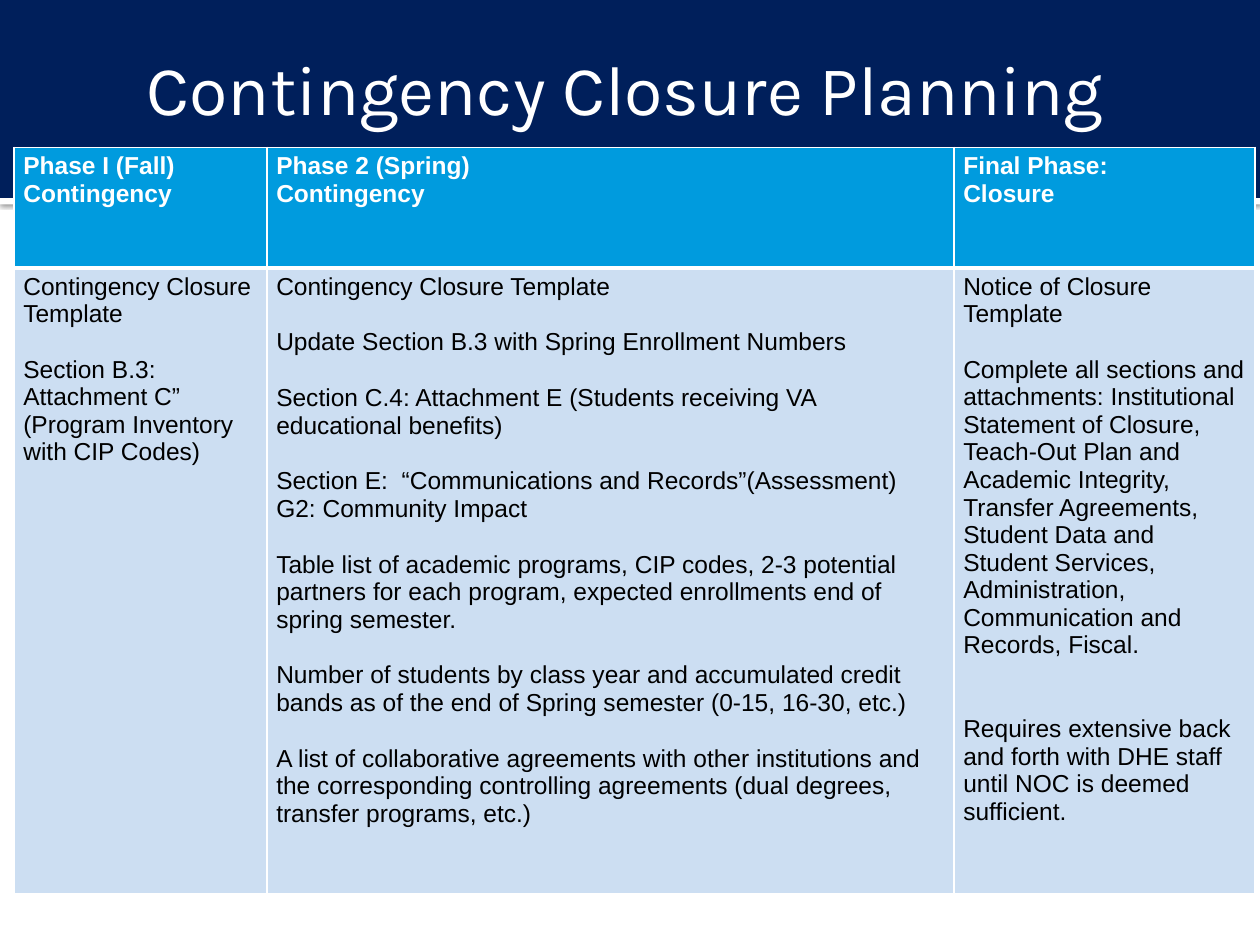
from lxml import etree
from pptx import Presentation
from pptx.dml.color import RGBColor
from pptx.enum import shapes, text
from pptx.oxml import ns
from pptx.util import Cm, Pt

COLORS = {
    "navy": "001F5B",
    "white": "FFFFFF",
    "header": "009BDE",
    "body": "CCDEF2",
    "ink": "000000",
}
LINE = 16.1  # height in points of one 14 pt line

PHASES = [
    {
        "width": 5.1,
        "heading": ["Phase I (Fall)", "Contingency"],
        # (lines of space above, wording)
        "tasks": [
            (0, "Contingency Closure Template"),
            (1, "Section B.3: Attachment C” (Program Inventory with CIP Codes)"),
        ],
    },
    {
        "width": 13.85,
        "heading": ["Phase 2 (Spring)", "Contingency"],
        "tasks": [
            (0, "Contingency Closure Template"),
            (1, "Update Section B.3 with Spring Enrollment Numbers"),
            (1, "Section C.4: Attachment E (Students receiving VA educational benefits)"),
            (1, "Section E:  “Communications and Records”(Assessment)"),
            (0, "G2: Community Impact"),
            (1, "Table list of academic programs, CIP codes, 2-3 potential partners "
                "for each program, expected enrollments end of spring semester."),
            (1, "Number of students by class year and accumulated credit bands as of "
                "the end of Spring semester (0-15, 16-30, etc.)"),
            (1, "A list of collaborative agreements with other institutions and the "
                "corresponding controlling agreements (dual degrees, transfer programs, etc.)"),
        ],
    },
    {
        "width": 6.07,
        "heading": ["Final Phase:", "Closure"],
        "tasks": [
            (0, "Notice of Closure Template"),
            (1, "Complete all sections and attachments: Institutional Statement of "
                "Closure, Teach-Out Plan and Academic Integrity, Transfer Agreements, "
                "Student Data and Student Services, Administration, Communication and "
                "Records, Fiscal."),
            (2, "Requires extensive back and forth with DHE staff until NOC is deemed "
                "sufficient."),
        ],
    },
]


def rgb(name):
    return RGBColor.from_string(COLORS[name])


def add_run(paragraph, wording, font_name, size, color, bold=False):
    run = paragraph.add_run()
    run.text = wording
    run.font.name = font_name
    run.font.size = Pt(size)
    run.font.bold = bold
    run.font.color.rgb = rgb(color)


def add_bar(slide, left, top, width, height, color):
    bar = slide.shapes.add_shape(shapes.MSO_SHAPE.RECTANGLE,
                                 Cm(left), Cm(top), Cm(width), Cm(height))
    bar.shadow.inherit = False
    bar.fill.solid()
    bar.fill.fore_color.rgb = rgb(color)
    bar.line.fill.background()
    return bar


def add_drop_shadow(bar):
    effects = bar.element.spPr.find(ns.qn("a:effectLst"))
    shadow = etree.SubElement(effects, ns.qn("a:outerShdw"), blurRad=str(Pt(2.5)),
                              dist=str(Pt(0.8)), dir="5400000", rotWithShape="0")
    color = etree.SubElement(shadow, ns.qn("a:srgbClr"), val=COLORS["ink"])
    etree.SubElement(color, ns.qn("a:alpha"), val="60000")


def build_banner(slide, left, top, width, height):
    # Navy band with a thin white, shadowed strip below it
    strip = add_bar(slide, left, top + height, width, 0.13, "white")
    add_drop_shadow(strip)
    add_bar(slide, left, top, width, height, "navy")

    # Title, brought in front of the band
    title = slide.shapes.title
    title.element.getparent().append(title.element)
    title.left, title.top = Cm(left + 0.2), Cm(top)
    title.width, title.height = Cm(width - 0.38), Cm(2.74)
    frame = title.text_frame
    frame.auto_size = text.MSO_AUTO_SIZE.NONE
    frame.word_wrap = True
    frame.vertical_anchor = text.MSO_ANCHOR.BOTTOM
    frame.margin_left = Cm(0.25)
    frame.margin_right = frame.margin_top = frame.margin_bottom = Cm(0.13)
    paragraph = frame.paragraphs[0]
    paragraph.alignment = text.PP_ALIGN.CENTER
    add_run(paragraph, "Contingency Closure Planning ", "Karla", 40, "white")


def set_borders(cell, widths):
    properties = cell._tc.get_or_add_tcPr()
    for position, (side, width) in enumerate(zip("LRTB", widths)):
        line = etree.Element(ns.qn(f"a:ln{side}"), w=str(Pt(width)))
        fill = etree.SubElement(line, ns.qn("a:solidFill"))
        etree.SubElement(fill, ns.qn("a:srgbClr"), val=COLORS["white"])
        properties.insert(position, line)


def fill_cell(cell, entries, background, color, bold, borders):
    cell.fill.solid()
    cell.fill.fore_color.rgb = rgb(background)
    cell.margin_left = cell.margin_right = Cm(0.19)
    cell.margin_top = cell.margin_bottom = Cm(0.1)
    frame = cell.text_frame
    for index, (gap, wording) in enumerate(entries):
        paragraph = frame.add_paragraph() if index else frame.paragraphs[0]
        paragraph.space_before = Pt(gap * LINE)
        add_run(paragraph, wording, "Arial", 14, color, bold)
    set_borders(cell, borders)


def build_phase_table(slide, left, top, width, header_height, body_height):
    frame = slide.shapes.add_table(2, len(PHASES), Cm(left), Cm(top), Cm(width),
                                   Cm(header_height + body_height))
    table = frame.table
    table.rows[0].height = Cm(header_height)
    table.rows[1].height = Cm(body_height)
    for column, phase in enumerate(PHASES):
        table.columns[column].width = Cm(phase["width"])
        heading = [(0, line) for line in phase["heading"]]
        # Border widths: left, right, top, bottom
        fill_cell(table.cell(0, column), heading, "header", "white", True, (1, 1, 1, 3))
        fill_cell(table.cell(1, column), phase["tasks"], "body", "ink", False, (1, 1, 3, 1))


def main():
    deck = Presentation()
    deck.slide_width, deck.slide_height = Cm(25.4), Cm(19.05)
    slide = deck.slides.add_slide(deck.slide_layouts.get_by_name("Title Only"))
    build_banner(slide, 0, 0, 25.4, 3.99)
    table_width = sum(phase["width"] for phase in PHASES)
    build_phase_table(slide, 0.28, 2.97, table_width, 2.43, 12.62)
    deck.save("out.pptx")


if __name__ == "__main__":
    main()
